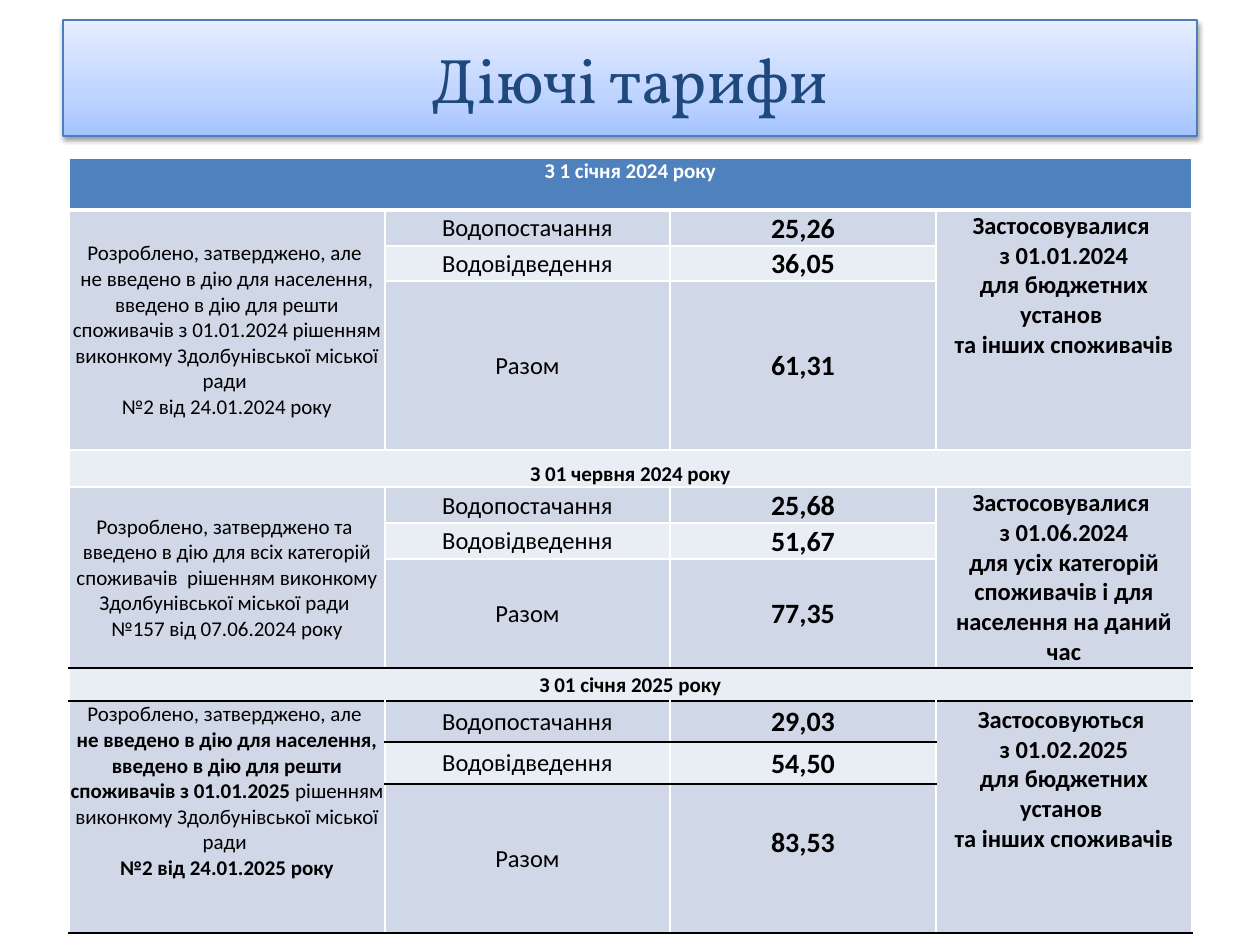
import copy
import lxml.etree
import pptx
import pptx.dml.color
import pptx.enum.shapes
import pptx.enum.text
import pptx.oxml
import pptx.oxml.ns
import pptx.util

PX = 914400 // 126
ALIGN = pptx.enum.text.PP_ALIGN
ANCHOR = pptx.enum.text.MSO_ANCHOR
WHITE, BLACK, BLUE, DARK, LIGHT = "FFFFFF", "000000", "4F81BD", "D0D8E8", "E9EDF4"
qn = pptx.oxml.ns.qn
rgb = pptx.dml.color.RGBColor.from_string


def write(frame, text, size=12, font="Calibri", color=BLACK, bold=False):
    """One paragraph per line, \\v breaks a line, * switches bold on and off."""
    frame.word_wrap = True
    for i, line in enumerate(text.split("\n")):
        paragraph = frame.paragraphs[0] if i == 0 else frame.add_paragraph()
        paragraph.alignment = ALIGN.CENTER
        for j, part in enumerate(line.split("*")):
            for k, piece in enumerate(part.split("\v")):
                if k:
                    paragraph.add_line_break()
                if piece:
                    run = paragraph.add_run()
                    run.text = piece
                    run.font.size = pptx.util.Pt(size)
                    run.font.name = font
                    run.font.bold = bold or j % 2 == 1
                    run.font.color.rgb = rgb(color)


def border(cell, edges):
    """Edges are (color, points) for left, right, top and bottom."""
    props = cell._tc.get_or_add_tcPr()
    for i, (side, (color, points)) in enumerate(zip("LRTB", edges)):
        line = lxml.etree.Element(qn(f"a:ln{side}"), w=str(pptx.util.Pt(points)))
        solid = lxml.etree.SubElement(line, qn("a:solidFill"))
        lxml.etree.SubElement(solid, qn("a:srgbClr"), val=color)
        props.insert(i, line)


deck = pptx.Presentation()
deck.slide_width, deck.slide_height = 1260 * PX, 945 * PX
slide = deck.slides.add_slide(deck.slide_layouts[6])

# Title banner with gradient and soft shadow
banner = slide.shapes.add_shape(pptx.enum.shapes.MSO_SHAPE.RECTANGLE,
                                63 * PX, 20 * PX, 1134 * PX, 116 * PX)
banner.fill.gradient()
banner.fill.gradient_angle = 90
stop_list = banner._element.spPr.find(".//" + qn("a:gsLst"))
stop_list.insert(1, copy.deepcopy(stop_list[0]))
shades = [(0, "A4C4FF"), (0.35, "BFD4FF"), (1, "E6EEFF")]
for stop, (position, color) in zip(banner.fill.gradient_stops, shades):
    stop.position = position
    stop.color.rgb = rgb(color)
banner.line.color.rgb = rgb("4B7EBC")
banner.line.width = pptx.util.Pt(0.75)
banner.shadow.inherit = False
banner._element.spPr.find(qn("a:effectLst")).append(pptx.oxml.parse_xml(
    '<a:outerShdw xmlns:a="http://schemas.openxmlformats.org/drawingml/2006/main" '
    'blurRad="40000" dist="20000" dir="5400000" rotWithShape="0">'
    '<a:srgbClr val="000000"><a:alpha val="38000"/></a:srgbClr></a:outerShdw>'))
banner.text_frame.vertical_anchor = ANCHOR.MIDDLE
write(banner.text_frame, "Діючі тарифи", size=36, font="Vollkorn", color="1F497D")

# Tariff table: three periods, each a heading row and three service rows
column_widths = [316, 285, 266, 256]
row_heights = [52, 36, 35, 169, 37, 36, 36, 109, 33, 41, 42, 149]
services = ["Водопостачання", "Водовідведення", "Разом"]
periods = [
    ("З 1 січня 2024 року", ANCHOR.TOP,
     "Розроблено, затверджено, але \vне введено в дію для населення, введено в дію для решти "
     "споживачів з 01.01.2024 рішенням виконкому Здолбунівської міської ради \v"
     "№2 від 24.01.2024 року", ANCHOR.MIDDLE,
     ["25,26", "36,05", "61,31"],
     "Застосовувалися \vз 01.01.2024\vдля бюджетних установ \vта інших споживачів"),
    ("З 01 червня 2024 року", ANCHOR.BOTTOM,
     "Розроблено, затверджено та \nвведено в дію для всіх категорій споживачів  рішенням "
     "виконкому Здолбунівської міської ради \n№157 від 07.06.2024 року", ANCHOR.MIDDLE,
     ["25,68", "51,67", "77,35"],
     "Застосовувалися \nз 01.06.2024\n"
     "для усіх категорій споживачів і для населення на даний час"),
    ("З 01 cічня 2025 року", ANCHOR.MIDDLE,
     "Розроблено, затверджено, але \v*не введено в дію для населення, введено в дію для решти "
     "споживачів з 01.01.2025 *рішенням виконкому Здолбунівської міської ради \v"
     "*№2 від 24.01.2025 року*", ANCHOR.TOP,
     ["29,03", "54,50", "83,53"],
     "Застосовуються \vз 01.02.2025\vдля бюджетних установ \vта інших споживачів"),
]
tariffs = slide.shapes.add_table(12, 4, 69 * PX, 158 * PX, sum(column_widths) * PX,
                                 sum(row_heights) * PX).table
tariffs.first_row = tariffs.horz_banding = False
for column, width in zip(tariffs.columns, column_widths):
    column.width = width * PX
for row, height in zip(tariffs.rows, row_heights):
    row.height = height * PX

# Merges: headings across, decision and scope down
for top in (0, 4, 8):
    tariffs.cell(top, 0).merge(tariffs.cell(top, 3))
    for c in (0, 3):
        tariffs.cell(top + 1, c).merge(tariffs.cell(top + 3, c))

# Fills, insets and borders
for r in range(12):
    for c in range(4):
        cell = tariffs.cell(r, c)
        cell.margin_left = cell.margin_right = cell.margin_top = PX
        cell.margin_bottom = 0
        cell.vertical_anchor = ANCHOR.MIDDLE
        light = r % 4 == 0 or (r % 4 == 2 and c in (1, 2))
        cell.fill.solid()
        cell.fill.fore_color.rgb = rgb(BLUE if r == 0 else LIGHT if light else DARK)
        black_edges = (8, 9, 10, 11, 12) if c in (1, 2) else (8, 9, 12)
        bottom = r + (cell.span_height if cell.is_merge_origin else 1)
        rules = [(BLACK if edge in black_edges else WHITE, 3 if edge == 1 else 1)
                 for edge in (r, bottom)]
        border(cell, [(WHITE, 1), (WHITE, 1)] + rules)

# Contents
for i, (heading, heading_anchor, decision, decision_anchor, prices, scope) in enumerate(periods):
    top = 4 * i
    heading_cell, decision_cell, scope_cell = (
        tariffs.cell(top, 0), tariffs.cell(top + 1, 0), tariffs.cell(top + 1, 3))
    heading_cell.vertical_anchor = heading_anchor
    decision_cell.vertical_anchor = decision_anchor
    scope_cell.vertical_anchor = ANCHOR.TOP
    write(heading_cell.text_frame, heading, color=BLACK if i else WHITE, bold=True)
    write(decision_cell.text_frame, decision)
    write(scope_cell.text_frame, scope, size=14, bold=True)
    for r, (service, price) in enumerate(zip(services, prices), top + 1):
        write(tariffs.cell(r, 1).text_frame, service, size=14)
        write(tariffs.cell(r, 2).text_frame, price, size=16, bold=True)
tariffs.cell(9, 3).margin_top = 4 * PX
tariffs.cell(11, 2).margin_bottom = 32 * PX

deck.save("out.pptx")
